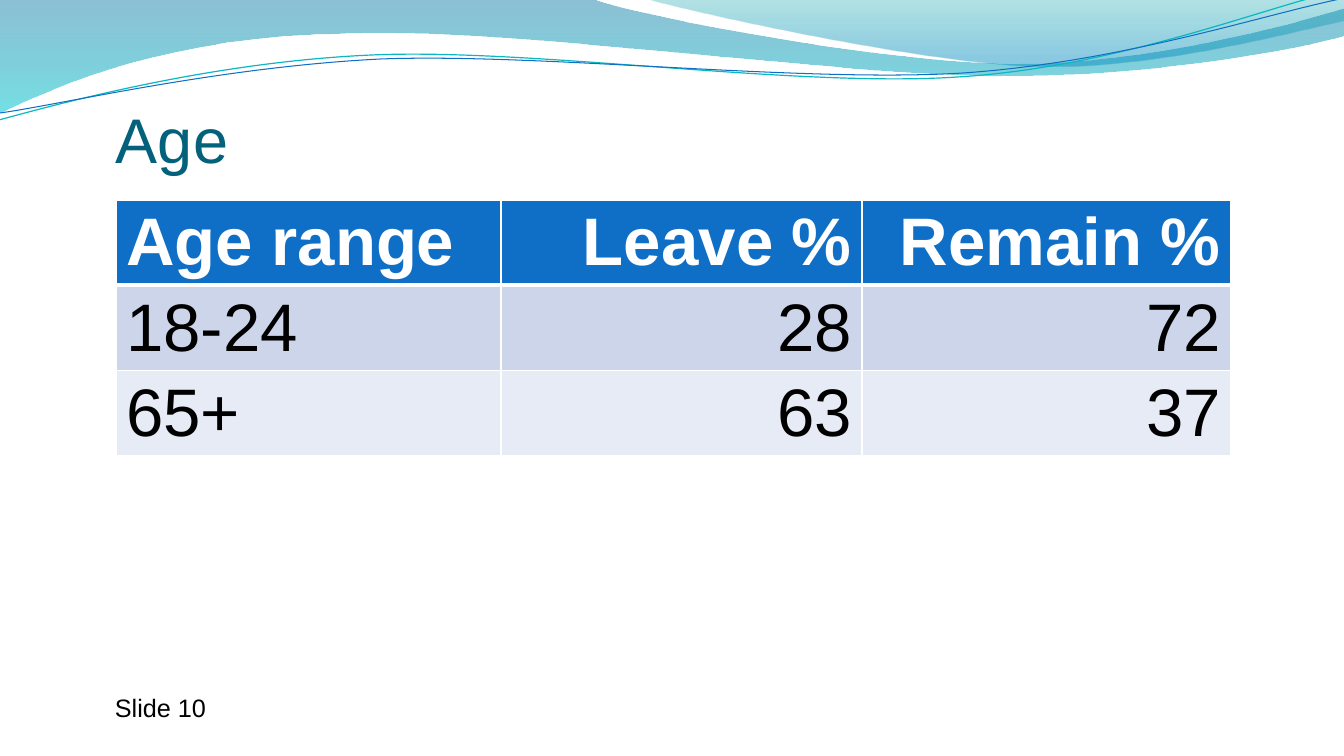
from lxml import etree
from pptx import Presentation
from pptx.dml.color import RGBColor
from pptx.enum.text import MSO_ANCHOR, MSO_AUTO_SIZE, PP_ALIGN
from pptx.oxml.ns import qn
from pptx.util import Pt

PX = 914400 / 100.8
WHITE = RGBColor(0xFF, 0xFF, 0xFF)
BLACK = RGBColor(0, 0, 0)
BLUE = RGBColor(0x0F, 0x6F, 0xC6)
TEAL = RGBColor(0x0A, 0xB8, 0xBF)
TITLE = RGBColor(0x04, 0x61, 0x7B)
BAND_DARK = RGBColor(0xCC, 0xD5, 0xEA)
BAND_LIGHT = RGBColor(0xE7, 0xEB, 0xF5)
DEEP_BLUE = RGBColor(0x00, 0x74, 0xA1)
CYAN = RGBColor(0x00, 0xC6, 0xCF)
SEA_GREEN = RGBColor(0x00, 0xA1, 0xA9)
SKY_BLUE = RGBColor(0x00, 0x8B, 0xBF)


def px(*values):
    return [round(v * PX) for v in values]


def add_curve(s, start, segments, close):
    """Draw straight (one point) and cubic (three points) segments, in px."""
    builder = s.shapes.build_freeform(*px(*start), scale=1.0)
    builder.add_line_segments([px(*pt) for seg in segments for pt in seg], close=close)
    sp = builder.convert_to_shape()
    sp.shadow.inherit = False
    lines = iter(list(sp._element.spPr.iter(qn("a:lnTo"))))
    for seg in segments:
        first, *others = [next(lines) for _ in seg]
        if others:
            first.tag = qn("a:cubicBezTo")
            for line in others:
                first.append(line[0])
                line.getparent().remove(line)
    return sp


prs = Presentation()
prs.slide_width, prs.slide_height = px(1344, 756)
s = prs.slides.add_slide(prs.slide_layouts[5])

# Waves: start, segments, gradient stops (position, colour, opacity %)
waves = [
    ((0, 0), [[(592, -1)],
              [(639, 17), (892, 64), (1019, 64)], [(1147, 64), (1288, 26), (1344, 9)],
              [(1346, 36)],
              [(1321, 44), (1169, 77), (1002, 76)], [(836, 76), (513, 28), (346, 34)],
              [(173, 36), (61, 84), (-1, 114)], [(0, 0)]],
     [(0, DEEP_BLUE, 45), (1, CYAN, 55)]),
    ((644, -1), [[(684, 11), (916, 62), (1033, 66)],
                 [(1150, 70), (1292, 32), (1344, 21)], [(1344, 0)], [(644, -1)]],
     [(0, SEA_GREEN, 30), (0.8, SKY_BLUE, 45)]),
]
for start, segments, stops in waves:
    sp = add_curve(s, start, segments, True)
    sp.line.fill.background()
    sp.fill.gradient()
    sp.fill.gradient_angle = 270
    for stop, (position, color, _) in zip(sp.fill.gradient_stops, stops):
        stop.position = position
        stop.color.rgb = color
    for clr, (_, _, opacity) in zip(sp._element.spPr.iter(qn("a:srgbClr")), stops):
        etree.SubElement(clr, qn("a:alpha"), val=str(opacity * 1000))

strands = [
    ((-1, 120), [[(65, 102), (213, 62), (372, 55)], [(531, 48), (796, 88), (958, 77)],
                 [(1119, 67), (1262, 8), (1342, -10)]], TEAL, 0.85),
    ((0, 113), [[(64, 104), (220, 67), (381, 59)], [(541, 53), (802, 83), (963, 73)],
                [(1124, 62), (1265, 14), (1345, -2)]], BLUE, 0.75),
]
for start, segments, color, width in strands:
    sp = add_curve(s, start, segments, False)
    sp.fill.background()
    sp.line.color.rgb = color
    sp.line.width = Pt(width)

# Title and slide label
title = s.shapes.title
title.left, title.top, title.width, title.height = px(116, 88, 1210, 88)
title.text_frame.margin_left = title.text_frame.margin_right = 0
title.text_frame.margin_bottom = 0
title.text_frame.vertical_anchor = MSO_ANCHOR.BOTTOM
label = s.shapes.add_textbox(*px(105, 687, 119, 40))
for sp, text, size, color in ((title, "Age", 45, TITLE), (label, "Slide 10", 18, BLACK)):
    tf = sp.text_frame
    tf.word_wrap = True
    tf.auto_size = MSO_AUTO_SIZE.NONE
    p = tf.paragraphs[0]
    p.alignment = PP_ALIGN.LEFT
    r = p.add_run()
    r.text = text
    r.font.name, r.font.size = "Arial", Pt(size)
    r.font.color.rgb = color

# Age table: rows grow to fit their text
rows = [("Age range", "Leave %", "Remain %"), ("18-24", "28", "72"), ("65+", "63", "37")]
fills = [BLUE, BAND_DARK, BAND_LIGHT]
frame = s.shapes.add_table(3, 3, *px(116, 200, 1115, 272))
table = frame.table
for column, width in zip(table.columns, px(385, 361, 369)):
    column.width = width
for i, (texts, fill) in enumerate(zip(rows, fills)):
    table.rows[i].height = px(41)[0]
    header = i == 0
    for j, text in enumerate(texts):
        cell = table.cell(i, j)
        for side in "LRTB":
            thick = (header and side == "B") or (i == 1 and side == "T")
            ln = etree.SubElement(cell._tc.get_or_add_tcPr(), qn(f"a:ln{side}"),
                                  w=str(Pt(3 if thick else 1)))
            solid = etree.SubElement(ln, qn("a:solidFill"))
            etree.SubElement(solid, qn("a:srgbClr"), val=str(WHITE))
        cell.fill.solid()
        cell.fill.fore_color.rgb = fill
        p = cell.text_frame.paragraphs[0]
        p.alignment = PP_ALIGN.RIGHT if j else PP_ALIGN.LEFT
        r = p.add_run()
        r.text = text
        r.font.name, r.font.size, r.font.bold = "Arial", Pt(48), header
        r.font.color.rgb = WHITE if header else BLACK
frame.height = px(272)[0]

prs.save("out.pptx")
